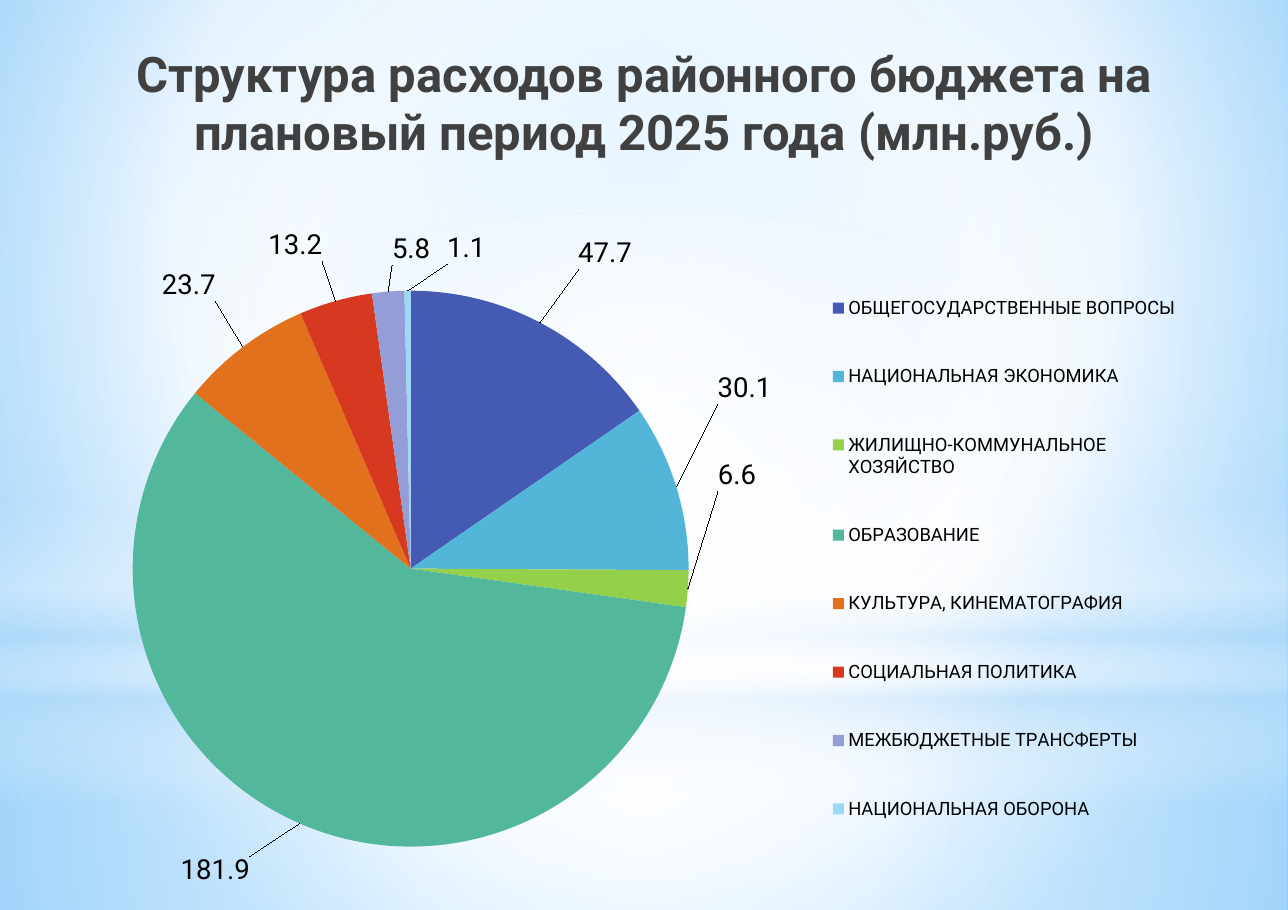
from pptx import Presentation
from pptx.chart.data import CategoryChartData
from pptx.dml.color import RGBColor
from pptx.enum.chart import XL_CHART_TYPE as ChartType, XL_LABEL_POSITION as LabelPosition
from pptx.enum.chart import XL_LEGEND_POSITION as LegendPosition
from pptx.enum.shapes import MSO_SHAPE as Shape
from pptx.enum.text import MSO_ANCHOR as Anchor, MSO_AUTO_SIZE as AutoSize, PP_ALIGN as Align
from pptx.oxml import parse_xml
from pptx.oxml.ns import nsdecls
from pptx.util import Inches, Pt

COLORS = {
    "title": "404040", "text": "000000", "white": "FFFFFF", "mist": "B4DCFA",
    "sky": "9ED5FF", "azure": "5BB9FF",
    "indigo": "455BB3", "blue": "53B5D8", "lime": "94D04A", "green": "53B79C",
    "orange": "E2711D", "red": "D63920", "lavender": "939ED6", "ice": "99DAF6",
}
FONT = "Roboto"


def paint_gradient(properties, stops, focus=None):
    """Swap a solid fill for (position, colour, opacity) stops: radial round focus, else downward."""
    marks = "".join(
        f'<a:gs pos="{place * 1000}"><a:srgbClr val="{COLORS[color]}">'
        f'<a:alpha val="{opacity * 1000}"/></a:srgbClr></a:gs>'
        for place, color, opacity in stops)
    if focus:
        sides = " ".join(f'{side}="{share * 1000}"' for side, share in zip("ltrb", focus))
        course = f'<a:path path="circle"><a:fillToRect {sides}/></a:path>'
    else:
        course = '<a:lin ang="5400000" scaled="0"/>'
    gradient = parse_xml(
        f'<a:gradFill {nsdecls("a")} rotWithShape="1"><a:gsLst>{marks}</a:gsLst>{course}</a:gradFill>')
    solid = properties.xpath("./a:solidFill")[0]
    properties.replace(solid, gradient)


def make_layout(inner=False, **shares):
    """Build a manual chart layout from x, y, w, h shares of the chart."""
    target = '<c:layoutTarget val="inner"/>' if inner else ""
    modes = '<c:xMode val="edge"/><c:yMode val="edge"/>' if "w" in shares else ""
    sizes = "".join(f'<c:{name} val="{share}"/>' for name, share in shares.items())
    return parse_xml(
        f'<c:layout {nsdecls("c")}><c:manualLayout>{target}{modes}{sizes}</c:manualLayout></c:layout>')


deck = Presentation()
deck.slide_width, deck.slide_height = Inches(11.69), Inches(8.26)
page = deck.slides.add_slide(deck.slide_layouts[5])

# Background and its light bands
page.background.fill.solid()
paint_gradient(page.element.xpath(".//p:bgPr")[0],
               [(0, "sky", 100), (60, "white", 100), (100, "azure", 100)], (20, 10, 20, 60))
center = (50, 50, 50, 50)
bands = [
    (Shape.RECTANGLE, 6.15, 2.11, center, [(0, "white", 91), (37, "white", 76), (100, "mist", 79)]),
    (Shape.RECTANGLE, 0, 6.15, center, [(0, "white", 89), (48, "white", 62), (100, "mist", 79)]),
    (Shape.RECTANGLE, 4.54, 2.75, None,
     [(0, "white", 0), (29, "white", 30), (45, "mist", 40), (55, "white", 26),
      (65, "mist", 60), (100, "white", 0)]),
    (Shape.OVAL, 1.93, 6.15, center, [(0, "white", 100), (56, "white", 0)]),
]
for kind, top, height, focus, stops in bands:
    band = page.shapes.add_shape(kind, 0, Inches(top), deck.slide_width, Inches(height))
    band.shadow.inherit = False
    band.line.fill.background()
    band.fill.solid()
    paint_gradient(band.element.spPr, stops, focus)

# Title, brought in front of the bands
title = page.shapes.title
title.element.getparent().append(title.element)
title.left, title.top, title.width, title.height = map(Inches, (0.35, 0.3, 11, 1.25))
frame = title.text_frame
frame.text = "Структура расходов районного бюджета на плановый период 2025 года (млн.руб.)"
for name, value in {"word_wrap": True, "auto_size": AutoSize.NONE,
                    "vertical_anchor": Anchor.MIDDLE}.items():
    setattr(frame, name, value)
para = frame.paragraphs[0]
para.alignment = Align.CENTER
span = para.runs[0]
for name, value in {"name": FONT, "size": Pt(32), "bold": True}.items():
    setattr(span.font, name, value)
span.font.color.rgb = RGBColor.from_string(COLORS["title"])

# Spending: name, value, colour, label shift as shares of the chart
spending = [
    ("ОБЩЕГОСУДАРСТВЕННЫЕ ВОПРОСЫ", 47.7, "indigo", 0.03, -0.07),
    ("НАЦИОНАЛЬНАЯ ЭКОНОМИКА", 30.1, "blue", 0.03, -0.12),
    ("ЖИЛИЩНО-КОММУНАЛЬНОЕ ХОЗЯЙСТВО", 6.6, "lime", 0.02, -0.17),
    ("ОБРАЗОВАНИЕ", 181.9, "green", -0.04, 0.04),
    ("КУЛЬТУРА, КИНЕМАТОГРАФИЯ", 23.7, "orange", -0.02, -0.06),
    ("СОЦИАЛЬНАЯ ПОЛИТИКА", 13.2, "red", -0.01, -0.05),
    ("МЕЖБЮДЖЕТНЫЕ ТРАНСФЕРТЫ", 5.8, "lavender", 0.02, -0.03),
    ("НАЦИОНАЛЬНАЯ ОБОРОНА", 1.1, "ice", 0.05, -0.03),
]
data = CategoryChartData(number_format="0.0")
data.categories = [item[0] for item in spending]
data.add_series("Series 1", [item[1] for item in spending])
chart = page.shapes.add_chart(
    ChartType.PIE, Inches(0.26), Inches(1.97), Inches(10.67), Inches(6.08), data).chart
chart.has_title = False
chart.font.name, chart.font.size = FONT, Pt(18)
chart.font.color.rgb = RGBColor.from_string(COLORS["text"])

chart.has_legend = True
legend = chart.legend
legend.position = LegendPosition.RIGHT
legend.include_in_layout = False
legend.font.name, legend.font.size = FONT, Pt(12)
legend_node = chart.element.xpath(".//c:legend")[0]
legend_node.xpath("./c:legendPos")[0].addnext(make_layout(x=0.67, y=0.05, w=0.32, h=0.92))

plot_node = chart.element.xpath(".//c:plotArea")[0]
for layout in plot_node.xpath("./c:layout"):
    plot_node.remove(layout)
plot_node.insert(0, make_layout(inner=True, x=0.08, y=0.11, w=0.49, h=0.83))

plot = chart.plots[0]
plot.vary_by_categories = True
series = plot.series[0]
labels = series.data_labels
labels.show_value = True
labels.position = LabelPosition.OUTSIDE_END
for index, (name, value, color, shift_x, shift_y) in enumerate(spending):
    point = series.points[index]
    point.format.fill.solid()
    point.format.fill.fore_color.rgb = RGBColor.from_string(COLORS[color])
    label = point.data_label
    label.position = LabelPosition.OUTSIDE_END
    label.font.name, label.font.size = FONT, Pt(18)
    label_index = chart.element.xpath(f'.//c:dLbl/c:idx[@val="{index}"]')[0]
    label_index.addnext(make_layout(x=shift_x, y=shift_y))
for leader in chart.element.xpath(".//c:ser/c:dLbls/c:showLeaderLines"):
    leader.set("val", "1")

deck.save("out.pptx")
